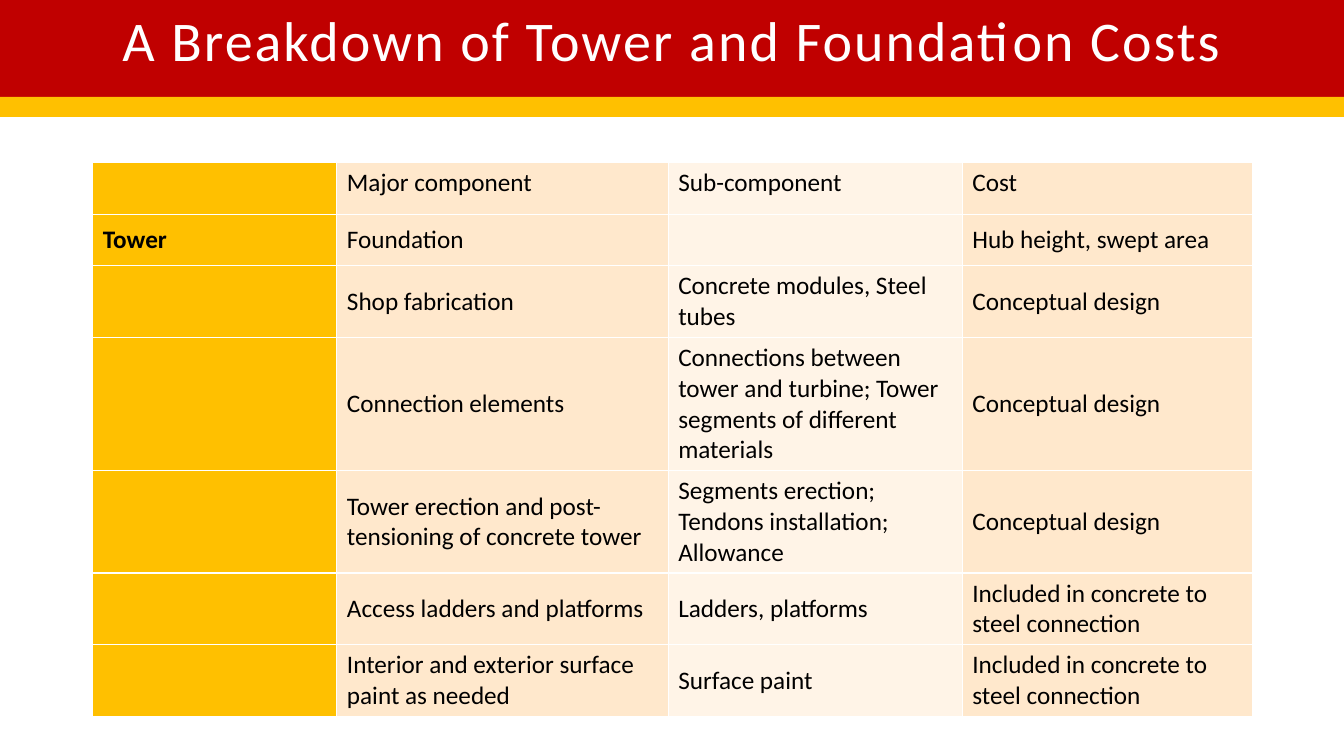
from lxml import etree
from pptx import Presentation
from pptx.dml.color import RGBColor
from pptx.enum.shapes import MSO_SHAPE
from pptx.enum.text import MSO_ANCHOR, PP_ALIGN
from pptx.oxml.ns import qn
from pptx.util import Cm, Pt

RECT = MSO_SHAPE.RECTANGLE
TOP, MIDDLE = MSO_ANCHOR.TOP, MSO_ANCHOR.MIDDLE
CENTER = PP_ALIGN.CENTER

FONT = "Calibri"
RED, GOLD, WHITE, BLACK = "C00000", "FFC000", "FFFFFF", "000000"
PEACH, CREAM = "FFE8CC", "FFF4E7"
WIDE = 33.87

WIDTHS = [6.15, 8.35, 7.41, 7.31]
FILLS = [GOLD, PEACH, CREAM, PEACH]
ROW = 1.3
DESIGN = "Conceptual design"
SHARED = "Included in concrete to steel connection"
COSTS = [
    ["", "Major component", "Sub-component", "Cost"],
    ["Tower", "Foundation", "", "Hub height, swept area"],
    ["", "Shop fabrication", "Concrete modules, Steel tubes", DESIGN],
    ["", "Connection elements",
     "Connections between tower and turbine; "
     "Tower segments of different materials", DESIGN],
    ["", "Tower erection and post-tensioning of concrete tower",
     "Segments erection; Tendons installation; Allowance", DESIGN],
    ["", "Access ladders and platforms", "Ladders, platforms", SHARED],
    ["", "Interior and exterior surface paint as needed",
     "Surface paint", SHARED],
]


def color(code):
    return RGBColor.from_string(code)


def add_run(para, text, size, code, bold=False):
    run = para.add_run()
    run.text = text
    run.font.name = FONT
    run.font.size = Pt(size)
    run.font.bold = bold
    run.font.color.rgb = color(code)
    return run


def add_band(slide, top, height, code):
    band = slide.shapes.add_shape(RECT, 0, Cm(top), Cm(WIDE), Cm(height))
    band.shadow.inherit = False
    band.fill.solid()
    band.fill.fore_color.rgb = color(code)
    band.line.fill.background()


def add_title(slide, text):
    box = slide.shapes.add_textbox(0, 0, Cm(WIDE), Cm(2.31))
    frame = box.text_frame
    frame.word_wrap = True
    frame.vertical_anchor = MIDDLE
    para = frame.paragraphs[0]
    para.alignment = CENTER
    para.line_spacing = 0.8
    run = add_run(para, text, 40, WHITE)
    run.font._element.set("spc", "150")


def add_edges(cell, code):
    """Draw a 1 pt line on all four sides; call before the cell is filled."""
    props = cell._tc.get_or_add_tcPr()
    for side in ("lnL", "lnR", "lnT", "lnB"):
        line = etree.SubElement(props, qn(f"a:{side}"), w=str(Pt(1)))
        fill = etree.SubElement(line, qn("a:solidFill"))
        etree.SubElement(fill, qn("a:srgbClr"), val=code)


def fill_cell(cell, text, code, anchor, bold):
    add_edges(cell, WHITE)
    cell.fill.solid()
    cell.fill.fore_color.rgb = color(code)
    cell.vertical_anchor = anchor
    if text:
        add_run(cell.text_frame.paragraphs[0], text, 18, BLACK, bold)


def add_costs(slide):
    frame = slide.shapes.add_table(
        len(COSTS), len(WIDTHS), Cm(2.34), Cm(4.1),
        Cm(sum(WIDTHS)), Cm(ROW * len(COSTS)))
    table = frame.table
    table.first_row = False
    table.horz_banding = False
    for col, width in zip(table.columns, WIDTHS):
        col.width = Cm(width)
    for r, texts in enumerate(COSTS):
        table.rows[r].height = Cm(ROW)
        anchor = MIDDLE if r else TOP
        for c, (text, code) in enumerate(zip(texts, FILLS)):
            fill_cell(table.cell(r, c), text, code, anchor, bold=c == 0)


def main():
    deck = Presentation()
    deck.slide_width, deck.slide_height = Cm(WIDE), Cm(19.05)
    slide = deck.slides.add_slide(deck.slide_layouts[6])
    add_band(slide, 0, 2.44, RED)
    add_band(slide, 2.44, 0.51, GOLD)
    add_costs(slide)
    add_title(slide, "A Breakdown of Tower and Foundation Costs")
    deck.save("out.pptx")


if __name__ == "__main__":
    main()
